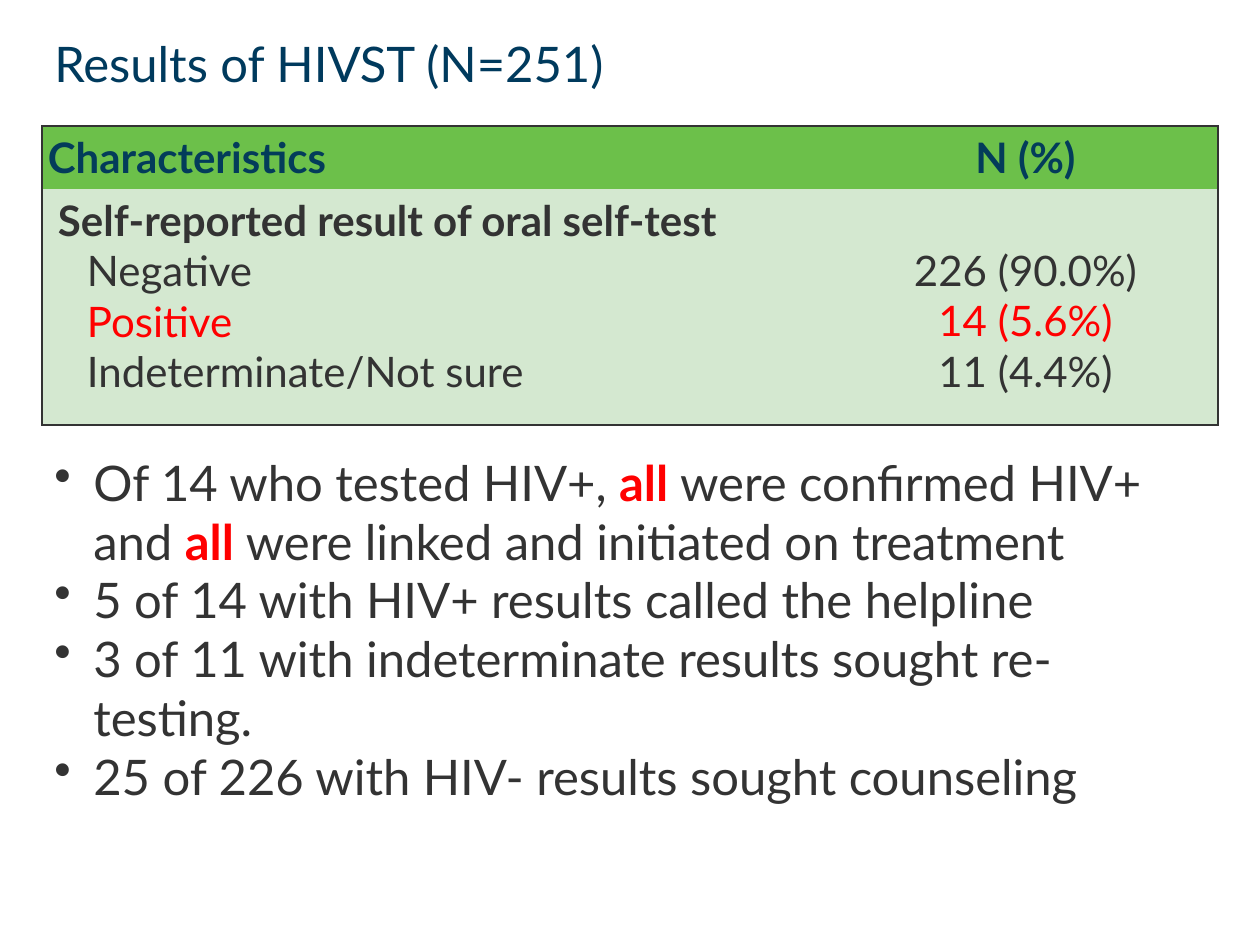
from lxml import etree
from pptx import Presentation, util as u
from pptx.dml.color import RGBColor
from pptx.enum import text
from pptx.oxml import ns

PX = 914400 // 126
COLORS = {
    "title": "003A5D", "header_text": "033C5A", "body": "333333",
    "accent": "FF0000", "header_fill": "6CC04A", "body_fill": "D4E8D0",
}


def px(length):
    return u.Emu(length * PX)


def rgb(name):
    return RGBColor.from_string(COLORS[name])


class SlideBuilder:
    font = "Lato"

    def __init__(self, slide):
        self.slide = slide

    def add_runs(self, paragraph, runs, size):
        for words, color, bold in runs:
            run = paragraph.add_run()
            run.text = words
            run.font.name = self.font
            run.font.size = u.Pt(size)
            run.font.bold = bold
            run.font.color.rgb = rgb(color)

    def fill_frame(self, frame, paragraphs, size, align=None, indents=(), bullet=None):
        for i, runs in enumerate(paragraphs):
            paragraph = frame.add_paragraph() if i else frame.paragraphs[0]
            paragraph.alignment = align
            props = paragraph._p.get_or_add_pPr()
            if indents:
                props.set("marL", str(px(indents[i])))
            if bullet:
                props.set("indent", str(-px(indents[i])))
                etree.SubElement(props, ns.qn("a:buChar"), char=bullet)
            self.add_runs(paragraph, runs, size)

    def add_text(self, box, paragraphs, size, anchor=text.MSO_ANCHOR.TOP, **layout):
        frame = self.slide.shapes.add_textbox(*map(px, box)).text_frame
        frame.word_wrap = True
        frame.vertical_anchor = anchor
        self.fill_frame(frame, paragraphs, size, **layout)

    def add_table(self, box, widths, heights):
        table = self.slide.shapes.add_table(
            len(heights), len(widths), *map(px, box)).table
        for column, width in zip(table.columns, widths):
            column.width = px(width)
        for row, height in zip(table.rows, heights):
            row.height = px(height)
        return table

    def add_cell(self, table, row, col, fill, paragraphs, top=6, **layout):
        cell = table.cell(row, col)
        cell.margin_left = cell.margin_right = cell.margin_bottom = px(6)
        cell.margin_top = px(top)
        cell.fill.solid()
        cell.fill.fore_color.rgb = rgb(fill)
        self.fill_frame(cell.text_frame, paragraphs, 24, **layout)
        outer = {
            "lnL": col == 0, "lnR": col == len(table.columns) - 1,
            "lnT": row == 0, "lnB": row == len(table.rows) - 1,
        }
        for place, (side, shown) in enumerate(outer.items()):
            line = etree.Element(ns.qn("a:" + side), w=str(u.Pt(1)))
            paint = etree.SubElement(line, ns.qn("a:solidFill" if shown else "a:noFill"))
            if shown:
                etree.SubElement(paint, ns.qn("a:srgbClr"), val=COLORS["body"])
            cell._tc.get_or_add_tcPr().insert(place, line)


def main():
    deck = Presentation()
    deck.slide_width, deck.slide_height = u.Inches(10), u.Inches(7.5)
    builder = SlideBuilder(deck.slides.add_slide(deck.slide_layouts[6]))
    center = text.PP_ALIGN.CENTER

    builder.add_text((42, 21, 1176, 84), [[("Results of HIVST (N=251)", "title", False)]],
                     28, anchor=text.MSO_ANCHOR.MIDDLE)

    results = [
        ("Negative", "226 (90.0%)", "body"),
        ("Positive", "14 (5.6%)", "accent"),
        ("Indeterminate/Not sure", "11 (4.4%)", "body"),
    ]
    labels = [[("Self-reported result of oral self-test", "body", True)]]
    labels += [[(label, color, False)] for label, count, color in results]
    counts = [[(count, color, False)] for label, count, color in results]

    table = builder.add_table((42, 126, 1176, 299), (791, 385), (63, 236))
    builder.add_cell(table, 0, 0, "header_fill", [[("Characteristics", "header_text", True)]])
    builder.add_cell(table, 0, 1, "header_fill", [[("N (%)", "header_text", True)]], align=center)
    builder.add_cell(table, 1, 0, "body_fill", labels, indents=(10, 39, 39, 39))
    builder.add_cell(table, 1, 1, "body_fill", counts, top=56, align=center)

    findings = [
        [("Of 14 who tested HIV+, ", "body", False), ("all ", "accent", True),
         ("were confirmed HIV+ and ", "body", False), ("all ", "accent", True),
         ("were linked and initiated on treatment", "body", False)],
        [("5 of 14 with HIV+ results called the helpline", "body", False)],
        [("3 of 11 with indeterminate results sought re-testing.", "body", False)],
        [("25 of 226 with HIV- results sought counseling", "body", False)],
    ]
    builder.add_text((42, 446, 1176, 428), findings, 28,
                     indents=[39] * len(findings), bullet="•")

    deck.save("out.pptx")


if __name__ == "__main__":
    main()
